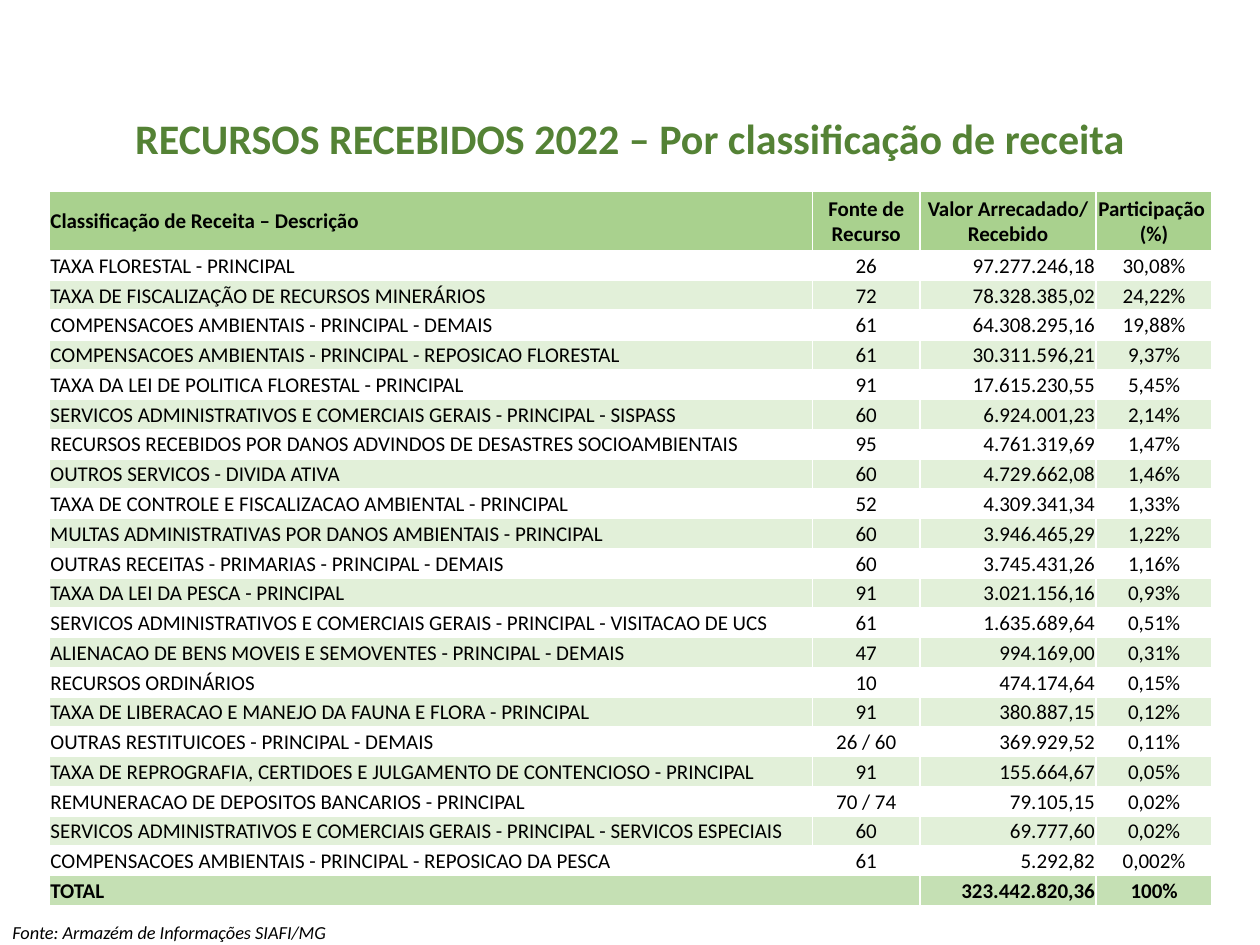
from lxml.etree import SubElement
from pptx import Presentation
from pptx.dml.color import RGBColor
from pptx.enum.text import MSO_ANCHOR as Anchor, PP_ALIGN as Align
from pptx.oxml.ns import qn
from pptx.util import Inches, Pt

FONT = "Calibri"
COLORS = {
    "title": "548235", "text": "000000", "border": "FFFFFF",
    "header": "A9D18E", "plain": "FFFFFF", "band": "E2F0D9", "total": "C5E0B4",
}

TITLE = "RECURSOS RECEBIDOS 2022 – Por classificação de receita"
SOURCE = "Fonte: Armazém de Informações SIAFI/MG"
HEADER = (
    "Classificação de Receita – Descrição", "Fonte de Recurso",
    "Valor Arrecadado/ Recebido", "Participação \n(%)",
)
REVENUES = [
    ("TAXA FLORESTAL - PRINCIPAL", "26", "97.277.246,18", "30,08%"),
    ("TAXA DE FISCALIZAÇÃO DE RECURSOS MINERÁRIOS", "72", "78.328.385,02", "24,22%"),
    ("COMPENSACOES AMBIENTAIS - PRINCIPAL - DEMAIS", "61", "64.308.295,16", "19,88%"),
    ("COMPENSACOES AMBIENTAIS - PRINCIPAL - REPOSICAO FLORESTAL", "61", "30.311.596,21", "9,37%"),
    ("TAXA DA LEI DE POLITICA FLORESTAL - PRINCIPAL", "91", "17.615.230,55", "5,45%"),
    ("SERVICOS ADMINISTRATIVOS E COMERCIAIS GERAIS - PRINCIPAL - SISPASS",
     "60", "6.924.001,23", "2,14%"),
    ("RECURSOS RECEBIDOS POR DANOS ADVINDOS DE DESASTRES SOCIOAMBIENTAIS",
     "95", "4.761.319,69", "1,47%"),
    ("OUTROS SERVICOS - DIVIDA ATIVA", "60", "4.729.662,08", "1,46%"),
    ("TAXA DE CONTROLE E FISCALIZACAO AMBIENTAL - PRINCIPAL", "52", "4.309.341,34", "1,33%"),
    ("MULTAS ADMINISTRATIVAS POR DANOS AMBIENTAIS - PRINCIPAL", "60", "3.946.465,29", "1,22%"),
    ("OUTRAS RECEITAS - PRIMARIAS - PRINCIPAL - DEMAIS", "60", "3.745.431,26", "1,16%"),
    ("TAXA DA LEI DA PESCA - PRINCIPAL", "91", "3.021.156,16", "0,93%"),
    ("SERVICOS ADMINISTRATIVOS E COMERCIAIS GERAIS - PRINCIPAL - VISITACAO DE UCS",
     "61", "1.635.689,64", "0,51%"),
    ("ALIENACAO DE BENS MOVEIS E SEMOVENTES - PRINCIPAL - DEMAIS", "47", "994.169,00", "0,31%"),
    ("RECURSOS ORDINÁRIOS", "10", "474.174,64", "0,15%"),
    ("TAXA DE LIBERACAO E MANEJO DA FAUNA E FLORA - PRINCIPAL", "91", "380.887,15", "0,12%"),
    ("OUTRAS RESTITUICOES - PRINCIPAL - DEMAIS", "26 / 60", "369.929,52", "0,11%"),
    ("TAXA DE REPROGRAFIA, CERTIDOES E JULGAMENTO DE CONTENCIOSO - PRINCIPAL",
     "91", "155.664,67", "0,05%"),
    ("REMUNERACAO DE DEPOSITOS BANCARIOS - PRINCIPAL", "70 / 74", "79.105,15", "0,02%"),
    ("SERVICOS ADMINISTRATIVOS E COMERCIAIS GERAIS - PRINCIPAL - SERVICOS ESPECIAIS",
     "60", "69.777,60", "0,02%"),
    ("COMPENSACOES AMBIENTAIS - PRINCIPAL - REPOSICAO DA PESCA", "61", "5.292,82", "0,002%"),
]
TOTAL = ("TOTAL", "", "323.442.820,36", "100%")

COLUMN_WIDTHS = (6.06, 0.85, 1.4, 0.92)
COLUMN_ALIGNS = (Align.LEFT, Align.CENTER, Align.RIGHT, Align.CENTER)
TABLE_LEFT, TABLE_TOP, TABLE_HEIGHT, HEADER_HEIGHT = 0.39, 1.52, 5.67, 0.47


def style_text(frame, size, color, align, bold=False, italic=False):
    for paragraph in frame.paragraphs:
        paragraph.alignment = align
        font = paragraph.font
        font.name, font.size, font.bold, font.italic = FONT, Pt(size), bold, italic
        font.color.rgb = RGBColor.from_string(COLORS[color])


def add_borders(cell):
    """Draw the four cell borders; they must precede the fill in the cell XML."""
    properties = cell._tc.get_or_add_tcPr()
    for side in ("lnL", "lnR", "lnT", "lnB"):
        line = SubElement(properties, qn(f"a:{side}"), w=str(Pt(1)))
        fill = SubElement(line, qn("a:solidFill"))
        SubElement(fill, qn("a:srgbClr"), val=COLORS["border"])


def fill_row(table, index, values, color, aligns=COLUMN_ALIGNS, bold=False):
    for cell, value, align in zip(table.rows[index].cells, values, aligns):
        cell.text = value
        cell.vertical_anchor = Anchor.MIDDLE
        cell.margin_left = cell.margin_top = cell.margin_right = Inches(0.01)
        cell.margin_bottom = 0
        style_text(cell.text_frame, 12, "text", align, bold)
        add_borders(cell)
        cell.fill.solid()
        cell.fill.fore_color.rgb = RGBColor.from_string(COLORS[color])


def add_revenue_table(page):
    row_count = len(REVENUES) + 2
    table = page.shapes.add_table(
        row_count, len(HEADER), Inches(TABLE_LEFT), Inches(TABLE_TOP),
        Inches(sum(COLUMN_WIDTHS)), Inches(TABLE_HEIGHT)).table
    for column, width in zip(table.columns, COLUMN_WIDTHS):
        column.width = Inches(width)
    for row in table.rows:
        row.height = Inches((TABLE_HEIGHT - HEADER_HEIGHT) / (row_count - 1))
    table.rows[0].height = Inches(HEADER_HEIGHT)

    fill_row(table, 0, HEADER, "header", (Align.LEFT,) + (Align.CENTER,) * 3, bold=True)
    for index, revenue in enumerate(REVENUES, 1):
        fill_row(table, index, revenue, "plain" if index % 2 else "band")
    last = row_count - 1
    fill_row(table, last, TOTAL, "total", bold=True)
    table.cell(last, 0).merge(table.cell(last, 1))


def main():
    deck = Presentation()
    deck.slide_width, deck.slide_height = Inches(10), Inches(7.5)
    page = deck.slides.add_slide(deck.slide_layouts[5])

    add_revenue_table(page)

    title = page.shapes.title
    title.left, title.top = Inches(0.5), Inches(0.72)
    title.width, title.height = Inches(9), Inches(0.79)
    title.text_frame.text = TITLE
    title.text_frame.vertical_anchor = Anchor.MIDDLE
    title.text_frame.paragraphs[0].line_spacing = 0.9
    style_text(title.text_frame, 24, "title", Align.CENTER, bold=True)

    source = page.shapes.add_textbox(0, Inches(7.3), Inches(7.95), Inches(0.2))
    source.text_frame.text = SOURCE
    source.text_frame.word_wrap = True
    source.text_frame.vertical_anchor = Anchor.MIDDLE
    style_text(source.text_frame, 10.5, "text", Align.LEFT, italic=True)

    deck.save("out.pptx")


if __name__ == "__main__":
    main()
